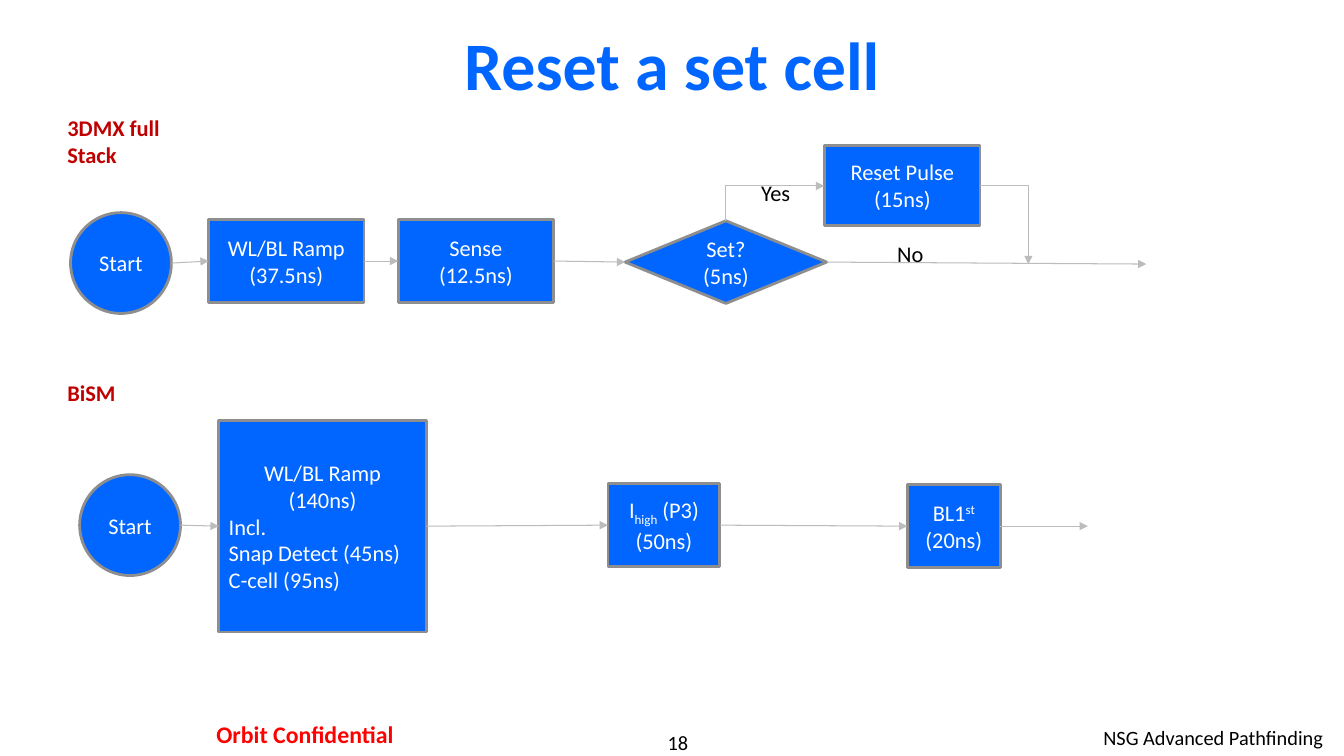
from itertools import pairwise

from lxml import etree
from pptx import Presentation
from pptx.dml.color import RGBColor
from pptx.enum.shapes import MSO_CONNECTOR, MSO_SHAPE
from pptx.enum.text import MSO_ANCHOR, PP_ALIGN
from pptx.oxml.ns import qn
from pptx.util import Pt

PX = 9144  # 100 px to the inch
FONT = "Calibri"

BLUE = RGBColor(0x00, 0x66, 0xFF)
EDGE = RGBColor(0x8E, 0x8E, 0x8E)
WIRE = RGBColor(0xBC, 0xBC, 0xBC)
MAROON = RGBColor(0xC0, 0x00, 0x00)
RED = RGBColor(0xFF, 0x00, 0x00)
BLACK = RGBColor(0x00, 0x00, 0x00)
WHITE = RGBColor(0xFF, 0xFF, 0xFF)

RECT, OVAL, DIAMOND = MSO_SHAPE.RECTANGLE, MSO_SHAPE.OVAL, MSO_SHAPE.DIAMOND
STRAIGHT, ELBOW = MSO_CONNECTOR.STRAIGHT, MSO_CONNECTOR.ELBOW
LEFT, CENTER, RIGHT = PP_ALIGN.LEFT, PP_ALIGN.CENTER, PP_ALIGN.RIGHT
TOP, MIDDLE = MSO_ANCHOR.TOP, MSO_ANCHOR.MIDDLE


def px(*nums):
    return [n * PX for n in nums]


def style(para, size, color, bold=False, align=LEFT):
    para.alignment = align
    for run in para.runs:
        font = run.font
        font.name, font.size, font.bold = FONT, Pt(size), bold
        font.color.rgb = color


def label(slide, box, text, size, color, bold=False, align=LEFT,
          wrap=False, anchor=TOP, pad=(10, 5)):
    frame = slide.shapes.add_textbox(*px(*box)).text_frame
    frame.word_wrap = wrap
    frame.vertical_anchor = anchor
    frame.margin_left = frame.margin_right = pad[0] * PX
    frame.margin_top = frame.margin_bottom = pad[1] * PX
    frame.text = text
    style(frame.paragraphs[0], size, color, bold, align)


def node(slide, kind, box, text, left_from=9):
    """Flow step; lines from left_from onward are left aligned."""
    shape = slide.shapes.add_shape(kind, *px(*box))
    shape.shadow.inherit = False
    shape.fill.solid()
    shape.fill.fore_color.rgb = BLUE
    shape.line.color.rgb = EDGE
    shape.line.width = Pt(2)
    frame = shape.text_frame
    frame.word_wrap = True
    frame.vertical_anchor = MIDDLE
    frame.text = text
    for i, para in enumerate(frame.paragraphs):
        style(para, 16, WHITE, align=CENTER if i < left_from else LEFT)
    return shape


def shift(shape, parts):
    """Rebuild the first line from (text, baseline) parts."""
    para = shape.text_frame.paragraphs[0]
    para.text = ""
    for text, base in parts:
        run = para.add_run()
        run.text = text
        run.font._element.set("baseline", str(base * 1000))
    style(para, 16, WHITE, align=CENTER)


def arrow(slide, ends, kind=STRAIGHT):
    wire = slide.shapes.add_connector(kind, *ends)
    wire.line.color.rgb = WIRE
    wire.line.width = Pt(0.75)
    line = wire.line._get_or_add_ln()
    etree.SubElement(line, qn("a:tailEnd"), type="triangle")
    etree.SubElement(wire._element.spPr, qn("a:effectLst"))
    return wire


def bend(slide, box, turn=False):
    """One-corner arrow; turn makes it rise first, then run right."""
    x, y, w, h = box
    wire = arrow(slide, px(x, y, x + w, y + h), ELBOW)
    props = wire._element.spPr
    props.find(qn("a:prstGeom")).set("prst", "bentConnector2")
    if turn:
        frame = props.find(qn("a:xfrm"))
        for key, val in (("rot", "5400000"), ("flipH", "1"), ("flipV", "1")):
            frame.set(key, val)


def chain(slide, steps, end):
    """Join the steps left to right and lead out to the end point."""
    def mid(step):
        return step.top + step.height // 2

    for a, b in pairwise(steps):
        arrow(slide, (a.left + a.width, mid(a), b.left, mid(b)))
    last = steps[-1]
    arrow(slide, (last.left + last.width, mid(last), *px(*end)))


def stack(slide):
    label(slide, (57, 108, 159, 37), "3DMX full Stack", 16, MAROON, True)
    steps = [
        node(slide, OVAL, (70, 211, 100, 100), "Start"),
        node(slide, RECT, (207, 218, 154, 82), "WL/BL Ramp\n(37.5ns)"),
        node(slide, RECT, (395, 218, 154, 82), "Sense\n(12.5ns)"),
        node(slide, DIAMOND, (620, 219, 200, 82), "Set? (5ns)"),
    ]
    chain(slide, steps, (1137, 262))

    # Reset branch
    node(slide, RECT, (818, 144, 154, 80), "Reset Pulse (15ns)")
    bend(slide, (751, 153, 35, 98), turn=True)
    bend(slide, (972, 184, 48, 78))
    label(slide, (745, 173, 49, 37), "Yes", 16, BLACK)
    label(slide, (880, 233, 47, 37), "No", 16, BLACK)


def bism(slide):
    label(slide, (57, 371, 69, 37), "BiSM", 16, MAROON, True)
    ramp = "WL/BL Ramp\n(140ns)\nIncl.\nSnap Detect (45ns)\nC-cell (95ns)"
    high = node(slide, RECT, (603, 480, 111, 82), "\n(50ns)")
    shift(high, [("I", 0), ("high", -25), (" (P3)", 0)])
    first = node(slide, RECT, (900, 481, 92, 82), "\n(20ns)")
    shift(first, [("BL1", 0), ("st", 30)])
    steps = [
        node(slide, OVAL, (79, 471, 100, 100), "Start"),
        node(slide, RECT, (217, 417, 206, 210), ramp, left_from=2),
        high,
        first,
    ]
    chain(slide, steps, (1079, 522))


def footer(slide):
    label(slide, (556, 724, 233, 24), "18", 14.5, BLACK,
          align=CENTER, wrap=True, pad=(0, 0))
    label(slide, (883, 715, 439, 35), "NSG Advanced Pathfinding", 14.5,
          BLACK, align=RIGHT, wrap=True)
    label(slide, (155, 708, 295, 41), "Orbit Confidential", 17, RED, True,
          CENTER, wrap=True, pad=(12, 6))


def main():
    deck = Presentation()
    deck.slide_width, deck.slide_height = px(1333, 750)
    slide = deck.slides.add_slide(deck.slide_layouts[6])

    # Title
    label(slide, (100, 17, 1133, 92), "Reset a set cell", 48.5, BLUE, True,
          CENTER, wrap=True, anchor=MIDDLE)
    # Flows
    stack(slide)
    bism(slide)
    footer(slide)
    deck.save("out.pptx")


if __name__ == "__main__":
    main()
